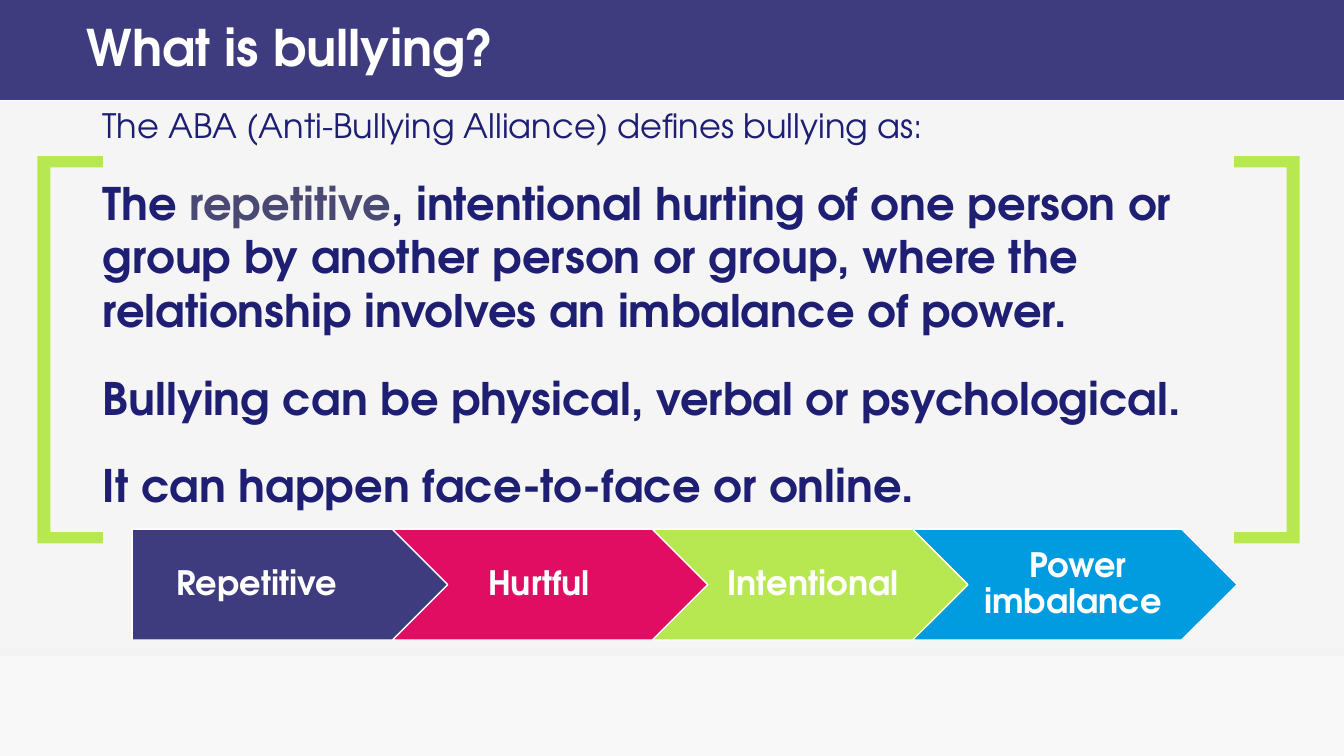
from dataclasses import dataclass

from lxml.etree import SubElement
from pptx import Presentation
from pptx.dml.color import RGBColor
from pptx.enum.shapes import MSO_SHAPE as Preset
from pptx.enum.text import MSO_ANCHOR as Anchor, MSO_AUTO_SIZE as AutoSize, PP_ALIGN as Align
from pptx.oxml.ns import qn
from pptx.util import Inches, Pt


@dataclass(frozen=True)
class Theme:
    font: str = "TeX Gyre Adventor"
    title_size: int = 36
    body_size: int = 32
    label_size: int = 24
    white: str = "FFFFFF"
    panel: str = "F2F2F2"
    purple: str = "3E3B7E"
    navy: str = "1E1F73"
    slate: str = "494973"
    pink: str = "E00D62"
    lime: str = "B8E851"
    blue: str = "019CDF"


class SlideBuilder:
    def __init__(self, slide, theme):
        self.slide = slide
        self.theme = theme

    def style(self, paragraph, size, color, bold=True, align=Align.LEFT):
        paragraph.alignment = align
        font = paragraph.font
        font.name, font.size, font.bold = self.theme.font, Pt(size), bold
        font.color.rgb = RGBColor.from_string(color)

    def paint(self, shape, fill, outline=None):
        shape.shadow.inherit = False
        shape.fill.solid()
        shape.fill.fore_color.rgb = RGBColor.from_string(fill)
        if outline:
            shape.line.color.rgb = RGBColor.from_string(outline)
            shape.line.width = Pt(1)
        else:
            shape.line.fill.background()

    def band(self, top, height, fill, opacity=100):
        """Add a full-width rectangle with opacity in percent."""
        band = self.slide.shapes.add_shape(
            Preset.RECTANGLE, 0, Inches(top), Inches(13.33), Inches(height))
        self.paint(band, fill)
        if opacity < 100:
            color = band.fill._xPr.find(qn("a:solidFill"))[0]
            SubElement(color, qn("a:alpha")).set("val", str(opacity * 1000))

    def title(self, text, left, top, width, height):
        title = self.slide.shapes.title
        title.left, title.top = Inches(left), Inches(top)
        title.width, title.height = Inches(width), Inches(height)
        # Bring the title in front of the bands
        title.element.getparent().append(title.element)
        frame = title.text_frame
        frame.text = text
        frame.auto_size = AutoSize.NONE
        frame.vertical_anchor = Anchor.MIDDLE
        frame.margin_left = frame.margin_right = Inches(0.07)
        frame.margin_top = frame.margin_bottom = Inches(0.04)
        frame.paragraphs[0].line_spacing = 0.9
        self.style(frame.paragraphs[0], self.theme.title_size, self.theme.white)

    def text(self, paragraphs, left, top, width, height, size, bold):
        """Add paragraphs, each a list of (text, colour override or None) runs."""
        frame = self.slide.shapes.add_textbox(
            Inches(left), Inches(top), Inches(width), Inches(height)).text_frame
        frame.word_wrap = True
        for index, runs in enumerate(paragraphs):
            paragraph = frame.add_paragraph() if index else frame.paragraphs[0]
            paragraph.space_before = Pt(12 if index else 0)
            paragraph.space_after = Pt(12)
            self.style(paragraph, size, self.theme.navy, bold)
            for words, color in runs:
                run = paragraph.add_run()
                run.text = words
                if color:
                    run.font.color.rgb = RGBColor.from_string(color)

    def brackets(self, left, right, top, bottom, arm, stroke, lip):
        """Add a facing pair of square brackets as one shape."""
        pair = None
        for edge, inward in ((left, 1), (right, -1)):
            tip, inner = edge + inward * arm, edge + inward * stroke
            corners = [(tip, top), (tip, top + lip), (inner, top + lip),
                       (inner, bottom - lip), (tip, bottom - lip),
                       (tip, bottom), (edge, bottom)]
            if pair is None:
                pair = self.slide.shapes.build_freeform(
                    Inches(edge), Inches(top), scale=1.0)
            else:
                pair.move_to(Inches(edge), Inches(top))
            pair.add_line_segments([(Inches(x), Inches(y)) for x, y in corners])
        self.paint(pair.convert_to_shape(), self.theme.lime)

    def step(self, preset, label, left, fill, align, inset):
        step = self.slide.shapes.add_shape(
            preset, Inches(left), Inches(5.25), Inches(3.22), Inches(1.1))
        self.paint(step, fill, self.theme.white)
        frame = step.text_frame
        frame.word_wrap = True
        frame.vertical_anchor = Anchor.MIDDLE
        frame.margin_left, frame.margin_right = Inches(inset), Inches(0.04)
        frame.margin_top = frame.margin_bottom = Inches(0.07)
        frame.text = label
        frame.paragraphs[0].line_spacing = 0.9
        self.style(frame.paragraphs[0], self.theme.label_size, self.theme.white, align=align)


def main():
    deck = Presentation()
    deck.slide_width, deck.slide_height = Inches(13.33), Inches(7.5)
    theme = Theme()
    page = SlideBuilder(deck.slides.add_slide(deck.slide_layouts[5]), theme)

    page.band(0, 0.99, theme.purple)
    page.band(6.43, 1.07, theme.panel, opacity=50)
    page.band(1, 5.51, theme.panel, opacity=75)
    page.title("What is bullying?", 0.79, 0.01, 12.26, 0.98)

    page.text([[("The ABA (Anti-Bullying Alliance) defines bullying as:", None)]],
              0.92, 0.99, 9.84, 0.6, theme.label_size, bold=False)
    definition = [
        [("The ", None), ("repetitive", theme.slate),
         (", intentional hurting of one person or group by another person or group, "
          "where the relationship involves an imbalance of power.", None)],
        [("Bullying can be physical, verbal or psychological.", None)],
        [("It can happen face-to-face or online.", None)],
    ]
    page.text(definition, 0.92, 1.69, 11.97, 3.29, theme.body_size, bold=True)
    page.brackets(0.37, 12.89, 1.55, 5.39, arm=0.65, stroke=0.13, lip=0.11)

    traits = [
        (Preset.PENTAGON, "Repetitive", theme.purple, Align.LEFT, 0.44),
        (Preset.CHEVRON, "Hurtful", theme.pink, Align.LEFT, 0.4),
        (Preset.CHEVRON, "Intentional ", theme.lime, Align.CENTER, 0.1),
        (Preset.CHEVRON, "Power imbalance ", theme.blue, Align.CENTER, 0.1),
    ]
    for index, (preset, label, fill, align, inset) in enumerate(traits):
        page.step(preset, label, 1.31 + 2.58 * index, fill, align, inset)

    deck.save("out.pptx")


if __name__ == "__main__":
    main()
